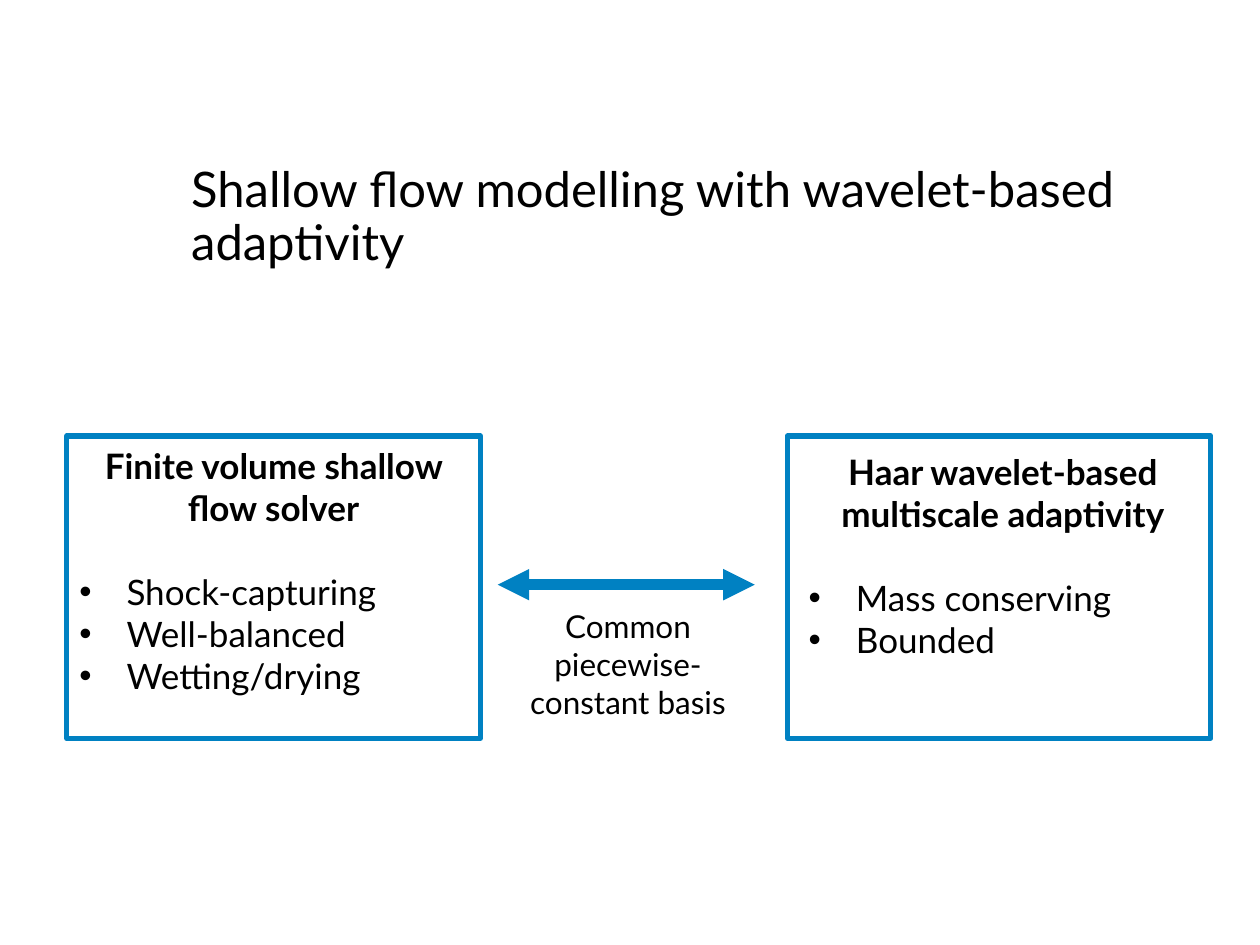
import pptx
import pptx.util
import pptx.dml.color
import pptx.enum.shapes
import pptx.enum.text
import pptx.oxml.ns
import lxml.etree

Pt = pptx.util.Pt
ALIGN = pptx.enum.text.PP_ALIGN
FONT = "Lato"
BLUE = "0081C2"
BLACK = "000000"


def color(code):
    return pptx.dml.color.RGBColor.from_string(code)


def add_tag(parent, name, **attrs):
    """Append a drawing element to its parent."""
    tag = lxml.etree.SubElement(parent, pptx.oxml.ns.qn(name))
    for key, value in attrs.items():
        tag.set(key, value)
    return tag


def add_text(frame, text, size=20, bold=False, align=ALIGN.LEFT,
             bullet=False, gap=0, lines=None, first=False):
    """Add one paragraph to a text frame."""
    para = frame.paragraphs[0] if first else frame.add_paragraph()
    para.alignment = align
    if gap:
        para.space_before = Pt(gap)
    if lines:
        para.line_spacing = lines
    if bullet:
        props = para._p.get_or_add_pPr()
        props.set("marL", str(Pt(27)))
        props.set("indent", str(-Pt(27)))
        add_tag(props, "a:buFont", typeface="Arial")
        add_tag(props, "a:buChar", char="•")
    run = para.add_run()
    run.text = text
    run.font.name = FONT
    run.font.size = Pt(size)
    run.font.bold = bold
    run.font.color.rgb = color(BLACK)


def add_frame(slide, left, top, width, height):
    box = slide.shapes.add_textbox(Pt(left), Pt(top), Pt(width), Pt(height))
    box.text_frame.word_wrap = True
    return box.text_frame


def add_title(slide, left, top, width, height, text):
    frame = add_frame(slide, left, top, width, height)
    add_text(frame, text, size=28, lines=0.9, first=True)


def add_panel(slide, left, top, width, height, head, items, inset):
    """Outlined panel with a heading and bullets, shifted by inset."""
    rect = slide.shapes.add_shape(
        pptx.enum.shapes.MSO_SHAPE.RECTANGLE,
        Pt(left), Pt(top), Pt(width), Pt(height))
    rect.shadow.inherit = False
    rect.fill.background()
    rect.line.color.rgb = color(BLUE)
    rect.line.width = Pt(3)

    # Heading and list
    right, down = inset
    frame = add_frame(slide, left + right, top + down, 236.2, 152)
    add_text(frame, head, bold=True, align=ALIGN.CENTER, first=True)
    for index, item in enumerate(items):
        add_text(frame, item, bullet=True, gap=0 if index else 24)


def add_link(slide, left, top, width, height, text):
    """Two-headed arrow above its caption."""
    arrow = slide.shapes.add_connector(
        pptx.enum.shapes.MSO_CONNECTOR.STRAIGHT,
        Pt(left + 5.8), Pt(top), Pt(left + 152.7), Pt(top))
    arrow.line.color.rgb = color(BLUE)
    arrow.line.width = Pt(6)
    line = arrow.line._get_or_add_ln()
    for end in ("a:headEnd", "a:tailEnd"):
        add_tag(line, end, type="triangle")
    add_tag(arrow._element.spPr, "a:effectLst")

    # Caption
    frame = add_frame(slide, left, top + 9.4, width, height - 9.4)
    add_text(frame, text, size=18, align=ALIGN.CENTER, first=True)


def main():
    deck = pptx.Presentation()
    deck.slide_width, deck.slide_height = Pt(720), Pt(540)
    slide = deck.slides.add_slide(deck.slide_layouts[6])

    add_title(slide, 102.2, 90.7, 596.9, 42.5,
              "Shallow flow modelling with wavelet-based adaptivity")
    add_panel(slide, 38.2, 249.1, 236.2, 172.8,
              "Finite volume shallow flow solver",
              ["Shock-capturing", "Well-balanced", "Wetting/drying"],
              inset=(0, 1.5))
    add_panel(slide, 450, 249.1, 241.9, 172.8,
              "Haar wavelet-based multiscale adaptivity",
              ["Mass conserving", "Bounded"], inset=(5, 5))
    add_link(slide, 278.6, 334.1, 160.6, 82,
             "Common piecewise-constant basis")
    deck.save("out.pptx")


if __name__ == "__main__":
    main()
